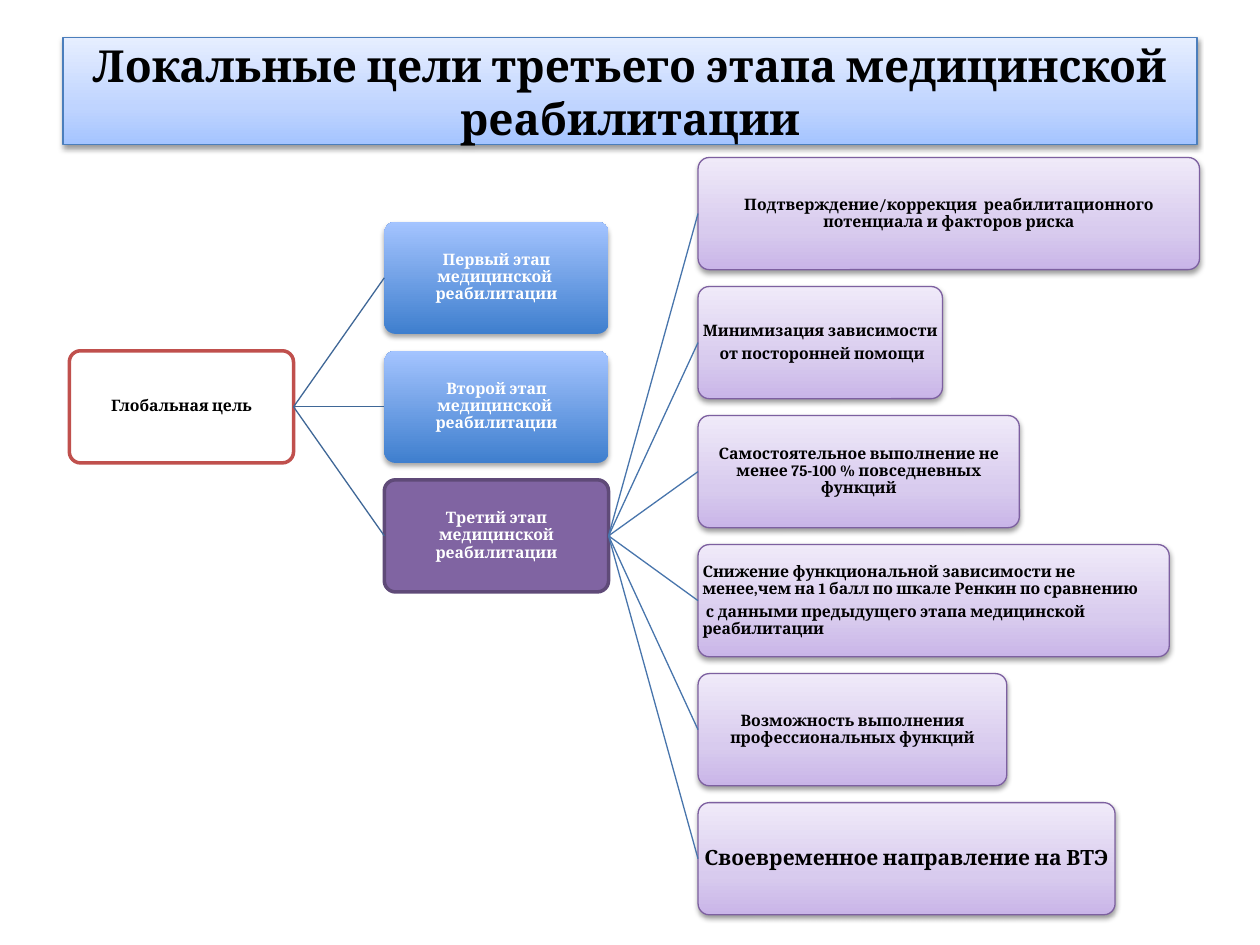
from lxml.etree import SubElement
from pptx import Presentation
from pptx.dml.color import RGBColor
from pptx.enum.shapes import MSO_CONNECTOR, MSO_SHAPE
from pptx.enum.text import MSO_ANCHOR, MSO_AUTO_SIZE, PP_ALIGN
from pptx.oxml.ns import qn
from pptx.util import Inches, Pt

FONT = "Cambria"
BOX_HEIGHT = 0.89
STAGE_WIDTH = 1.78
ROW_STEP = 1.024
GOAL_LEFT, STAGE_LEFT, TASK_LEFT = 0.55, 3.05, 5.54
STAGE_TOP, TASK_TOP = 1.76, 1.25

TITLE_GRADIENT = [(0, "A4C4FF"), (35, "BFD4FF"), (100, "E6EEFF")]
STAGE_GRADIENT = [(0, "3F7FCE"), (100, "A4C4FF")]
TASK_GRADIENT = [(0, "C9B5E8"), (35, "D8CBEE"), (100, "F0EAF9")]

STAGES = [
    "Первый этап медицинской  реабилитации",
    "Второй этап медицинской  реабилитации",
    "Третий этап медицинской реабилитации",
]
# Text, width, font size, alignment
TASKS = [
    ("Подтверждение/коррекция  реабилитационного потенциала и факторов риска",
     3.98, 9, PP_ALIGN.CENTER),
    ("Минимизация зависимости\n от посторонней помощи", 1.94, 9, PP_ALIGN.CENTER),
    ("Самостоятельное выполнение не менее 75-100 % повседневных функций",
     2.55, 9, PP_ALIGN.CENTER),
    ("Снижение функциональной зависимости не менее,чем на 1 балл по шкале Ренкин "
     "по сравнению\n с данными предыдущего этапа медицинской реабилитации",
     3.74, 9, PP_ALIGN.LEFT),
    ("Возможность выполнения профессиональных функций", 2.45, 9, PP_ALIGN.CENTER),
    ("Своевременное направление на ВТЭ", 3.31, 12, PP_ALIGN.CENTER),
]


def rgb(value):
    return RGBColor.from_string(value)


def set_fill(shape, fill):
    """Fill with one colour, or with a list of stops running from bottom to top."""
    if isinstance(fill, str):
        shape.fill.solid()
        shape.fill.fore_color.rgb = rgb(fill)
        return
    shape.fill.gradient()
    shape.fill.gradient_angle = 90
    stops = next(shape._element.spPr.iter(qn("a:gsLst")))
    for stop in list(stops):
        stops.remove(stop)
    for position, color in fill:
        stop = SubElement(stops, qn("a:gs"), pos=str(position * 1000))
        SubElement(stop, qn("a:srgbClr"), val=color)


def set_line(shape, color, width):
    if color is None:
        shape.line.fill.background()
        return
    shape.line.color.rgb = rgb(color)
    shape.line.width = Pt(width)


def set_shadow(shape, opacity, distance):
    """Give a soft black shadow straight below; opacity 0 means none."""
    shape.shadow.inherit = False
    if not opacity:
        return
    effects = shape._element.spPr.find(qn("a:effectLst"))
    shadow = SubElement(effects, qn("a:outerShdw"), blurRad=str(Pt(3.1)),
                        dist=str(Pt(distance)), dir="5400000", rotWithShape="0")
    color = SubElement(shadow, qn("a:srgbClr"), val="000000")
    SubElement(color, qn("a:alpha"), val=str(opacity * 1000))


def format_text(paragraph, size, color, align):
    paragraph.alignment = align
    for span in paragraph.runs:
        span.font.name = FONT
        span.font.size = Pt(size)
        span.font.bold = True
        span.font.color.rgb = rgb(color)


def add_title(page, text):
    title = page.shapes.title
    title.left, title.top = Inches(0.5), Inches(0.3)
    title.width, title.height = Inches(9), Inches(0.85)
    set_fill(title, TITLE_GRADIENT)
    set_line(title, "4B7EBC", 0.75)
    set_shadow(title, 38, 1.6)
    frame = title.text_frame
    frame.text = text
    frame.auto_size = MSO_AUTO_SIZE.NONE
    frame.vertical_anchor = MSO_ANCHOR.MIDDLE
    format_text(frame.paragraphs[0], 25.2, "000000", PP_ALIGN.CENTER)


def add_box(page, text, left, top, width, fill, line=None, line_width=0.75,
            shadow=(0, 0), size=9, color="000000", align=PP_ALIGN.CENTER):
    box = page.shapes.add_shape(MSO_SHAPE.ROUNDED_RECTANGLE, Inches(left), Inches(top),
                                Inches(width), Inches(BOX_HEIGHT))
    box.adjustments[0] = 0.1
    set_fill(box, fill)
    set_line(box, line, line_width)
    set_shadow(box, *shadow)
    frame = box.text_frame
    frame.word_wrap = True
    frame.vertical_anchor = MSO_ANCHOR.MIDDLE
    # The rounded corners add about 0.03 inch to the text margin
    frame.margin_left = frame.margin_right = Inches(0.01)
    frame.margin_top = frame.margin_bottom = Inches(0.01)
    frame.text = text
    for paragraph in frame.paragraphs:
        paragraph.line_spacing = 0.9
        paragraph.space_after = Pt(size * 0.35)
        format_text(paragraph, size, color, align)
    return box


def join(page, parent, child, color):
    """Draw a line from the right side of parent to the left side of child."""
    link = page.shapes.add_connector(MSO_CONNECTOR.STRAIGHT, 0, 0, 0, 0)
    link.begin_connect(parent, 3)
    link.end_connect(child, 1)
    set_line(link, color, 0.75)
    SubElement(link._element.spPr, qn("a:effectLst"))


def add_stage(page, index, text):
    top = STAGE_TOP + index * ROW_STEP
    if index == len(STAGES) - 1:
        return add_box(page, text, STAGE_LEFT, top, STAGE_WIDTH, "8064A2",
                       line="5F4A78", line_width=2, color="FFFFFF")
    return add_box(page, text, STAGE_LEFT, top, STAGE_WIDTH, STAGE_GRADIENT,
                   shadow=(35, 1.8), color="FFFFFF")


def main():
    deck = Presentation()
    deck.slide_width, deck.slide_height = Inches(10), Inches(7.5)
    page = deck.slides.add_slide(deck.slide_layouts[5])
    add_title(page, "Локальные цели третьего этапа медицинской реабилитации")

    goal = add_box(page, "Глобальная цель", GOAL_LEFT, STAGE_TOP + ROW_STEP, STAGE_WIDTH,
                   "FFFFFF", line="C0504D", line_width=2)
    for index, text in enumerate(STAGES):
        stage = add_stage(page, index, text)
        join(page, goal, stage, "3F6797")

    for index, (text, width, size, align) in enumerate(TASKS):
        task = add_box(page, text, TASK_LEFT, TASK_TOP + index * ROW_STEP, width,
                       TASK_GRADIENT, line="7D60A0", shadow=(38, 1.6),
                       size=size, align=align)
        join(page, stage, task, "4875AC")

    deck.save("out.pptx")


if __name__ == "__main__":
    main()
